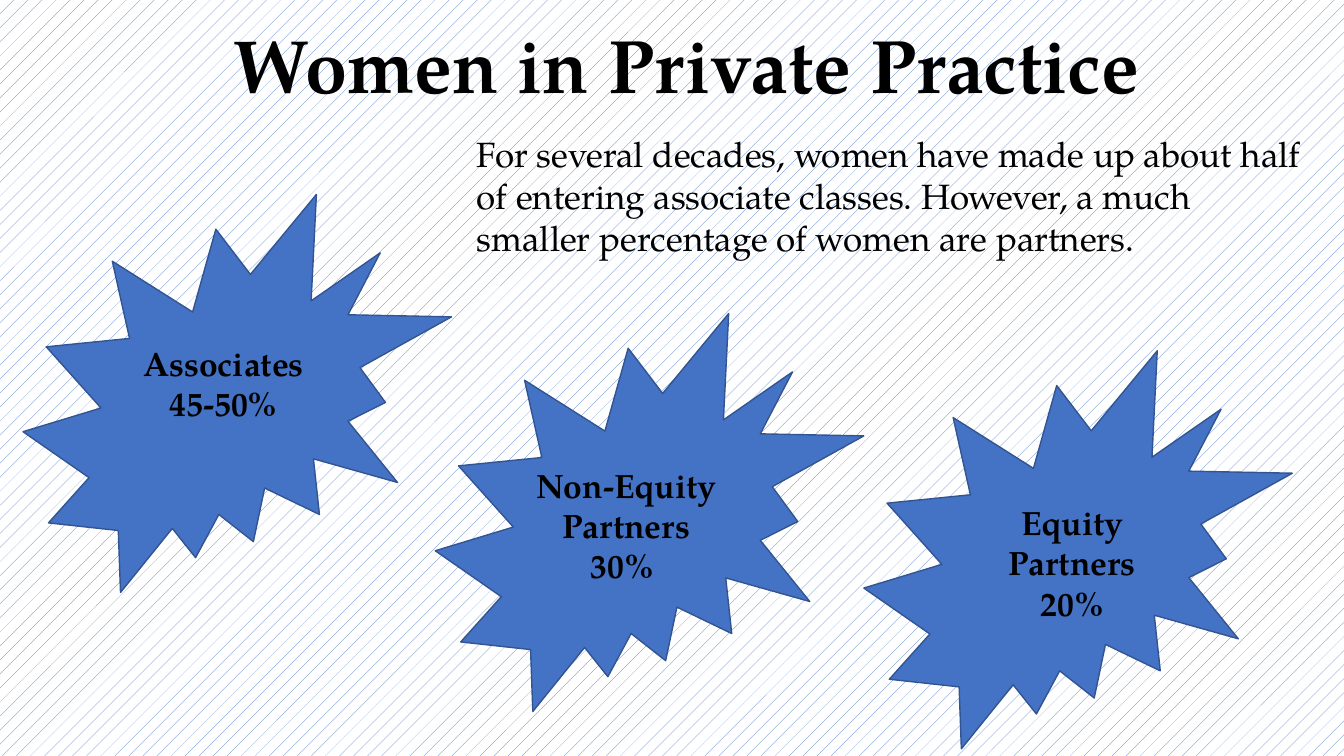
from pptx import Presentation
from pptx.dml.color import RGBColor
from pptx.enum.dml import MSO_PATTERN
from pptx.enum.shapes import MSO_SHAPE
from pptx.enum.text import MSO_ANCHOR, MSO_AUTO_SIZE, PP_ALIGN
from pptx.oxml.xmlchemy import OxmlElement
from pptx.util import Cm, Pt

FONT = "TeX Gyre Pagella"
COLOURS = {"blue": "4472C4", "outline": "325491", "white": "FFFFFF", "text": "000000"}
BURST_WIDTH, BURST_HEIGHT = 10.8, 10.03

# Burst corner (left, top), label box (left, top, width, height), label lines
GROUPS = [
    ((0.58, 4.9), (3.3, 8.51, 4.67, 2.31), ["Associates", "45-50%"]),
    ((10.97, 7.9), (13.21, 11.58, 5.16, 3.33), ["Non-Equity Partners", "30% "]),
    ((21.77, 8.84), (24.69, 12.52, 4.67, 3.33), ["Equity Partners 20%"]),
]


def colour(name):
    return RGBColor.from_string(COLOURS[name])


def place(shape, left, top, width, height):
    shape.left, shape.top = Cm(left), Cm(top)
    shape.width, shape.height = Cm(width), Cm(height)


def write(shape, lines, size, bold, align):
    frame = shape.text_frame
    frame.word_wrap = True
    frame.auto_size = MSO_AUTO_SIZE.NONE
    frame.vertical_anchor = MSO_ANCHOR.TOP
    for index, line in enumerate(lines):
        paragraph = frame.add_paragraph() if index else frame.paragraphs[0]
        paragraph.alignment = align
        paragraph.space_before = Pt(0)
        run = paragraph.add_run()
        run.text = line
        run.font.name, run.font.size, run.font.bold = FONT, Pt(size), bold
        run.font.color.rgb = colour("text")


def remove_bullet(paragraph):
    properties = paragraph._p.get_or_add_pPr()
    properties.set("marL", "0")
    properties.set("indent", "0")
    properties.append(OxmlElement("a:buNone"))


def paint_background(slide):
    fill = slide.background.fill
    fill.patterned()
    fill.pattern = MSO_PATTERN.PERCENT_5
    fill.fore_color.rgb = colour("blue")
    fill.back_color.rgb = colour("white")


def add_burst(slide, left, top):
    burst = slide.shapes.add_shape(
        MSO_SHAPE.EXPLOSION2, Cm(left), Cm(top), Cm(BURST_WIDTH), Cm(BURST_HEIGHT))
    burst.shadow.inherit = False
    burst.fill.solid()
    burst.fill.fore_color.rgb = colour("blue")
    burst.line.color.rgb = colour("outline")
    burst.line.width = Pt(1)


def add_label(slide, box, lines):
    label = slide.shapes.add_textbox(*map(Cm, box))
    write(label, lines, 24, True, PP_ALIGN.CENTER)


def main():
    presentation = Presentation()
    presentation.slide_width, presentation.slide_height = Cm(33.87), Cm(19.05)
    slide = presentation.slides.add_slide(presentation.slide_layouts[1])
    paint_background(slide)

    # Title and introduction
    title, body = slide.shapes.title, slide.placeholders[1]
    place(title, 5.64, 0.33, 23.85, 2.57)
    write(title, ["Women in Private Practice"], 54, True, PP_ALIGN.LEFT)
    place(body, 11.76, 3.2, 21.54, 3.45)
    write(body, ["For several decades, women have made up about half of entering "
                 "associate classes. However, a much smaller percentage of women "
                 "are partners."], 25, False, PP_ALIGN.LEFT)
    remove_bullet(body.text_frame.paragraphs[0])

    # Bursts with their labels
    for corner, box, lines in GROUPS:
        add_burst(slide, *corner)
        add_label(slide, box, lines)

    presentation.save("out.pptx")


if __name__ == "__main__":
    main()
